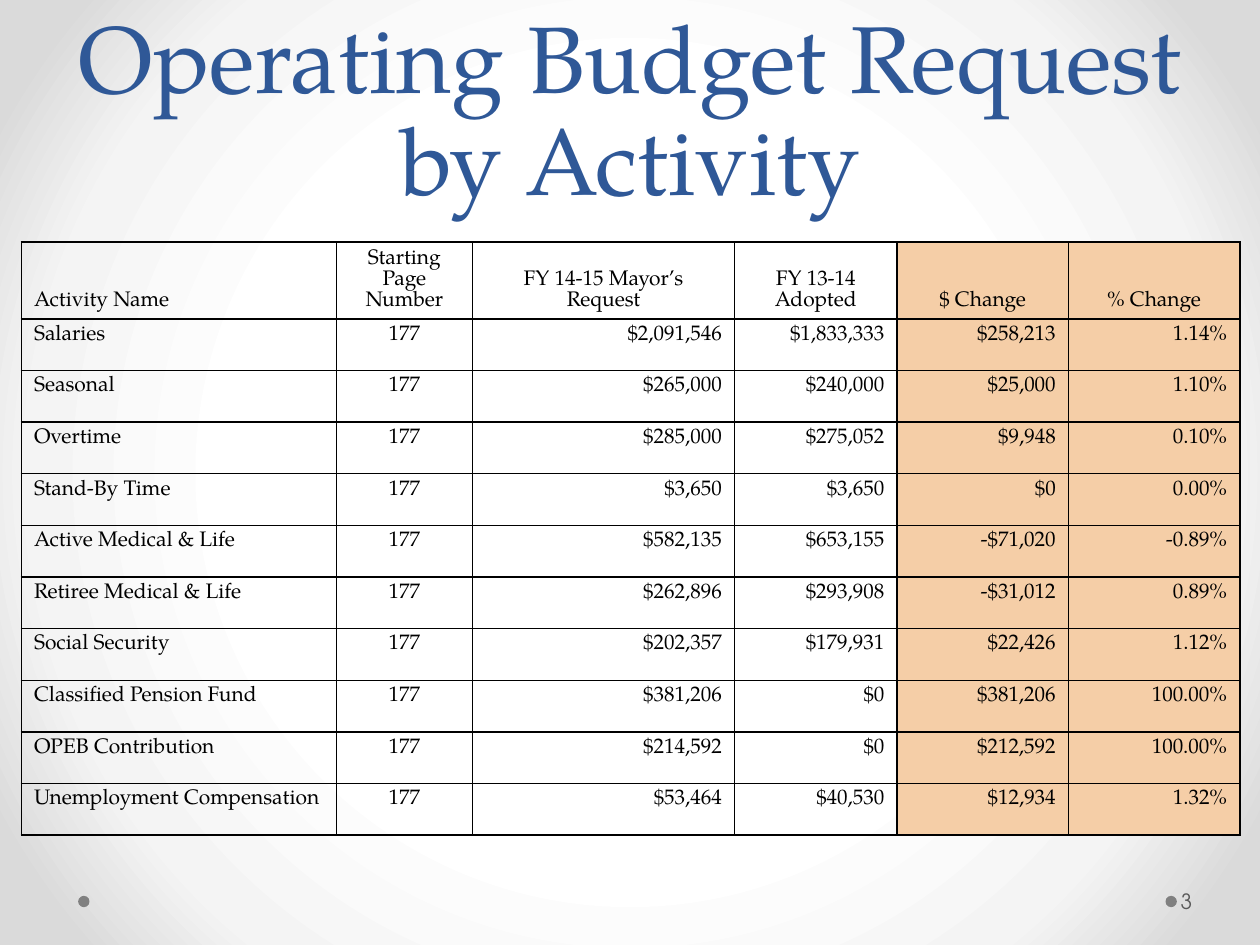
from pptx import Presentation
from pptx.dml.color import RGBColor
from pptx.enum.shapes import MSO_SHAPE
from pptx.enum.text import MSO_ANCHOR, PP_ALIGN
from pptx.oxml import parse_xml
from pptx.oxml.ns import nsdecls
from pptx.util import Inches, Pt

LEFT, CENTER, RIGHT = PP_ALIGN.LEFT, PP_ALIGN.CENTER, PP_ALIGN.RIGHT
TOP, MIDDLE, BOTTOM = MSO_ANCHOR.TOP, MSO_ANCHOR.MIDDLE, MSO_ANCHOR.BOTTOM
OVAL = MSO_SHAPE.OVAL

BLUE = RGBColor(0x2F, 0x58, 0x97)
BLACK = RGBColor(0, 0, 0)
PEACH = RGBColor(0xF5, 0xCE, 0xA7)
DOT_GRAY = RGBColor(0x80, 0x80, 0x80)
NUMBER_GRAY = RGBColor(0x59, 0x59, 0x59)
WHITE = RGBColor(0xFF, 0xFF, 0xFF)
PALE_GRAY = RGBColor(0xF4, 0xF4, 0xF4)
EDGE_GRAY = RGBColor(0xDA, 0xDA, 0xDA)

SERIF, SANS = "TeX Gyre Pagella", "TeX Gyre Adventor"
WIDTH, HEIGHT = 10, 7.5

COL_WIDTHS = [2.5, 1.08, 2.08, 1.29, 1.36, 1.36]
COL_ALIGNS = [LEFT, CENTER, RIGHT, RIGHT, RIGHT, RIGHT]
CHANGE_COLS = (4, 5)
HEADER_HEIGHT, ROW_HEIGHT = 0.61, 0.41
PAGE = "177"
HEADER = ["Activity Name", "Starting Page Number", "FY 14-15 Mayor’s Request",
          "FY 13-14 Adopted", "$ Change", "% Change"]
ACTIVITIES = [
    ["Salaries", PAGE, "$2,091,546", "$1,833,333", "$258,213", "1.14%"],
    ["Seasonal", PAGE, "$265,000", "$240,000", "$25,000", "1.10%"],
    ["Overtime", PAGE, "$285,000", "$275,052", "$9,948", "0.10%"],
    ["Stand-By Time", PAGE, "$3,650", "$3,650", "$0", "0.00%"],
    ["Active Medical & Life", PAGE, "$582,135", "$653,155", "-$71,020", "-0.89%"],
    ["Retiree Medical & Life", PAGE, "$262,896", "$293,908", "-$31,012", "0.89%"],
    ["Social Security", PAGE, "$202,357", "$179,931", "$22,426", "1.12%"],
    ["Classified Pension Fund", PAGE, "$381,206", "$0", "$381,206", "100.00%"],
    ["OPEB Contribution", PAGE, "$214,592", "$0", "$212,592", "100.00%"],
    ["Unemployment Compensation", PAGE, "$53,464", "$40,530", "$12,934", "1.32%"],
]


class BudgetSlide:
    """Holds the text style and the slide; box lengths are in inches."""

    def __init__(self, prs):
        self.s = prs.slides.add_slide(prs.slide_layouts[6])
        self.font, self.size, self.color = SERIF, 12, BLACK

    def background(self, stops):
        self.s.background.fill.solid()
        bg = self.s.element.xpath(".//p:bgPr")[0]
        gs = "".join(f'<a:gs pos="{pos * 1000}"><a:srgbClr val="{color}"/></a:gs>'
                     for pos, color in stops)
        bg.replace(bg[0], parse_xml(
            f'<a:gradFill {nsdecls("a")} rotWithShape="1"><a:gsLst>{gs}</a:gsLst>'
            '<a:path path="circle"><a:fillToRect l="50000" t="50000" '
            'r="50000" b="50000"/></a:path></a:gradFill>'))

    def paragraph(self, tf, text, align=LEFT, spacing=None, font=None, size=None,
                  color=None):
        p = tf.paragraphs[0]
        p.text = text
        p.alignment = align
        if spacing:
            p.line_spacing = Pt(spacing)
        p.font.name = font or self.font
        p.font.size = Pt(size or self.size)
        p.font.color.rgb = color or self.color

    def text(self, x, y, w, h, text, anchor, inset=0.1, **style):
        tf = self.s.shapes.add_textbox(*map(Inches, (x, y, w, h))).text_frame
        tf.word_wrap = True
        tf.vertical_anchor = anchor
        tf.margin_left = Inches(inset)
        tf.margin_right = Inches(0.05)
        self.paragraph(tf, text, **style)

    def dot(self, x, y, d):
        sp = self.s.shapes.add_shape(OVAL, *map(Inches, (x, y, d, d)))
        sp.shadow.inherit = False
        sp.fill.solid()
        sp.fill.fore_color.rgb = DOT_GRAY
        sp.line.fill.background()

    def cell(self, cell, text, align, anchor, fill):
        cell.vertical_anchor = anchor
        if fill:
            cell.fill.solid()
            cell.fill.fore_color.rgb = fill
        else:
            cell.fill.background()
        self.paragraph(cell.text_frame, text, align, spacing=12)
        # Borders come before the fill
        tcPr = cell._tc.get_or_add_tcPr()
        for i, side in enumerate("LRTB"):
            tcPr.insert(i, parse_xml(
                f'<a:ln{side} {nsdecls("a")} w="{Pt(1)}"><a:solidFill>'
                f'<a:srgbClr val="{BLACK}"/></a:solidFill></a:ln{side}>'))

    def table(self, x, y, rows):
        heights = [HEADER_HEIGHT] + [ROW_HEIGHT] * (len(rows) - 1)
        box = map(Inches, (x, y, sum(COL_WIDTHS), sum(heights)))
        table = self.s.shapes.add_table(len(rows), len(COL_WIDTHS), *box).table
        table.first_row = table.horz_banding = False
        for col, width in zip(table.columns, COL_WIDTHS):
            col.width = Inches(width)
        for r, (row, height) in enumerate(zip(rows, heights)):
            table.rows[r].height = Inches(height)
            for c, text in enumerate(row):
                align = CENTER if r == 0 and c > 0 else COL_ALIGNS[c]
                self.cell(table.cell(r, c), text, align, TOP if r else BOTTOM,
                          PEACH if c in CHANGE_COLS else None)


def main():
    prs = Presentation()
    prs.slide_width, prs.slide_height = Inches(WIDTH), Inches(HEIGHT)
    slide = BudgetSlide(prs)

    # Backdrop and footer dots
    slide.background([(0, WHITE), (50, WHITE), (76, PALE_GRAY),
                      (92, EDGE_GRAY), (100, EDGE_GRAY)])
    for x in (9.25, 0.62):
        slide.dot(x, 7.11, 0.09)

    # Title
    slide.text(0.5, 0, 9, 1.75, "Operating Budget Request by Activity", BOTTOM,
               inset=0.05, align=CENTER, spacing=58, size=54, color=BLUE)

    # Budget table
    slide.table(0.17, 1.92, [HEADER] + ACTIVITIES)

    # Slide number
    slide.text(9.34, 6.95, 0.61, 0.4, "3", MIDDLE, inset=0.03,
               font=SANS, color=NUMBER_GRAY)

    prs.save("out.pptx")


if __name__ == "__main__":
    main()
